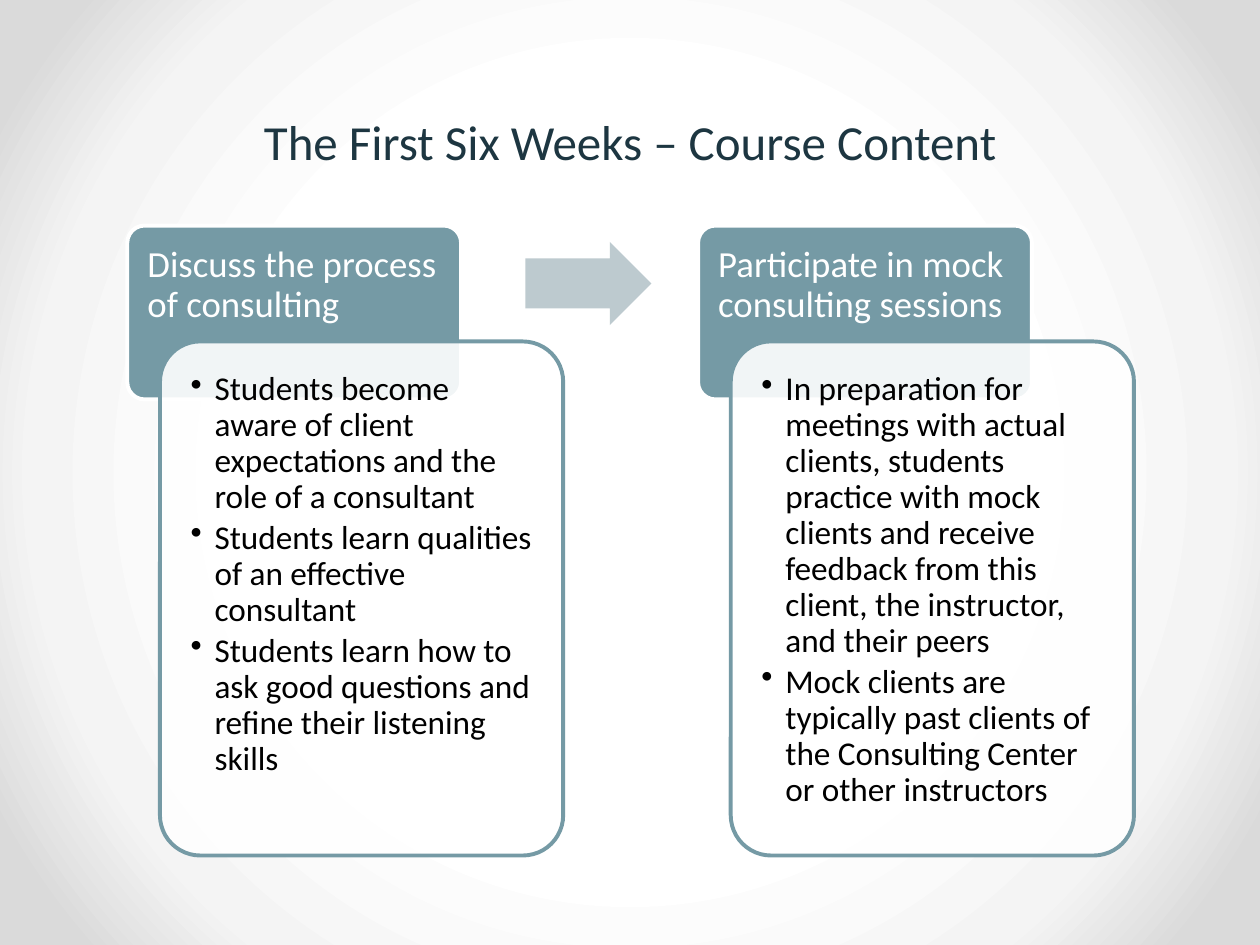
from pptx import Presentation
from pptx.dml.color import RGBColor
from pptx.enum.shapes import MSO_SHAPE
from pptx.enum.text import MSO_ANCHOR, PP_ALIGN
from pptx.oxml import parse_xml
from pptx.oxml.ns import nsdecls, qn
from pptx.util import Inches, Pt
from lxml import etree

TITLE = "The First Six Weeks – Course Content"
STAGES = [
    ("Discuss the process of consulting", [
        "Students become aware of client expectations and the role of a consultant",
        "Students learn qualities of an effective consultant",
        "Students learn how to ask good questions and refine their listening skills",
    ]),
    ("Participate in mock consulting sessions", [
        "In preparation for meetings with actual clients, students practice with mock "
        "clients and receive feedback from this client, the instructor, and their peers",
        "Mock clients are typically past clients of the Consulting Center or other instructors",
    ]),
]
COLORS = {"title": "1D3641", "teal": "759AA5", "arrow": "BDCACF",
          "white": "FFFFFF", "black": "000000"}
BACKGROUND = [(50, "FFFFFF"), (76, "F4F4F4"), (92, "DADADA")]
FONT = "Calibri"
LEFT, STEP = 1.01, 4.53
INDENT = 0.19


def rgb(name):
    return RGBColor.from_string(COLORS[name])


def set_background(slide):
    """Radial gradient spreading from the centre of the slide."""
    stops = "".join(f'<a:gs pos="{pos * 1000}"><a:srgbClr val="{color}"/></a:gs>'
                    for pos, color in BACKGROUND)
    bg = parse_xml(
        f'<p:bg {nsdecls("p", "a")}><p:bgPr><a:gradFill rotWithShape="1">'
        f'<a:gsLst>{stops}</a:gsLst><a:path path="circle">'
        '<a:fillToRect l="50000" t="50000" r="50000" b="50000"/></a:path>'
        '</a:gradFill><a:effectLst/></p:bgPr></p:bg>')
    slide.element.cSld.insert(0, bg)


def add_shape(slide, kind, box, adjustments, fill, line=None):
    sp = slide.shapes.add_shape(kind, *map(Inches, box))
    sp.shadow.inherit = False
    for i, value in enumerate(adjustments):
        sp.adjustments[i] = value
    sp.fill.solid()
    sp.fill.fore_color.rgb = rgb(fill)
    if line:
        sp.line.color.rgb = rgb(line)
        sp.line.width = Pt(2.25)
    else:
        sp.line.fill.background()
    return sp


def format_run(p, size, color):
    for r in p.runs:
        r.font.name, r.font.size = FONT, Pt(size)
        r.font.color.rgb = rgb(color)


def write(sp, lines, size, color, inset, after):
    tf = sp.text_frame
    tf.word_wrap = True
    tf.vertical_anchor = MSO_ANCHOR.TOP
    tf.margin_left = tf.margin_top = tf.margin_right = tf.margin_bottom = Inches(inset)
    tf.text = "\n".join(lines)
    for p in tf.paragraphs:
        p.alignment = PP_ALIGN.LEFT
        p.line_spacing = 0.9
        p.space_after = Pt(after)
        format_run(p, size, color)


def add_bullets(sp):
    for p in sp.text_frame.paragraphs:
        pPr = p._p.get_or_add_pPr()
        pPr.set("marL", str(Inches(INDENT)))
        pPr.set("indent", str(-Inches(INDENT)))
        etree.SubElement(pPr, qn("a:buChar")).set("char", "•")


def add_stage(slide, x, heading, points):
    head = add_shape(slide, MSO_SHAPE.ROUNDED_RECTANGLE, (x, 1.79, 2.65, 1.38),
                     [0.1], "teal", "white")
    write(head, [heading], 21, "white", 0.12, 0)
    detail = add_shape(slide, MSO_SHAPE.ROUNDED_RECTANGLE, (x + 0.26, 2.71, 3.2, 4.08),
                       [0.1], "white", "teal")
    color = detail.fill._xPr.find(".//" + qn("a:srgbClr"))
    etree.SubElement(color, qn("a:alpha")).set("val", "90000")
    write(detail, points, 19, "black", 0.15, 3)
    add_bullets(detail)


prs = Presentation()
prs.slide_width, prs.slide_height = Inches(10), Inches(7.5)
slide = prs.slides.add_slide(prs.slide_layouts[5])
set_background(slide)

title = slide.shapes.title
title.left, title.top, title.width, title.height = map(Inches, (0.5, 0.83, 9, 0.57))
title.text_frame.text = TITLE
title.text_frame.vertical_anchor = MSO_ANCHOR.MIDDLE
title.text_frame.paragraphs[0].alignment = PP_ALIGN.CENTER
format_run(title.text_frame.paragraphs[0], 28, "title")

for i, (heading, points) in enumerate(STAGES):
    add_stage(slide, LEFT + i * STEP, heading, points)
add_shape(slide, MSO_SHAPE.RIGHT_ARROW, (4.17, 1.92, 1, 0.66), [0.6, 0.5], "arrow")

prs.save("out.pptx")
